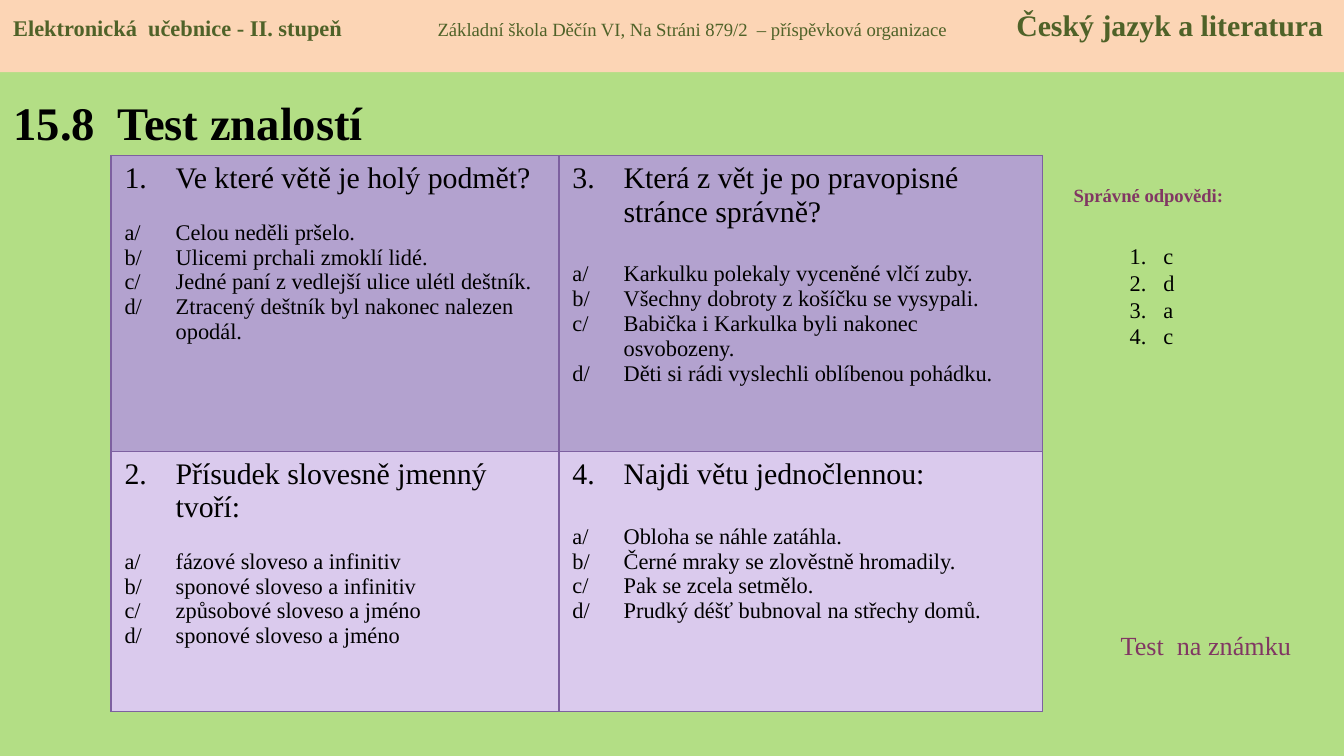
from lxml import etree
from pptx import Presentation
from pptx.dml.color import RGBColor
from pptx.enum.shapes import MSO_SHAPE
from pptx.enum.text import MSO_ANCHOR, MSO_AUTO_SIZE, PP_ALIGN
from pptx.oxml.ns import qn
from pptx.util import Pt

RECTANGLE = MSO_SHAPE.RECTANGLE
TOP, MIDDLE = MSO_ANCHOR.TOP, MSO_ANCHOR.MIDDLE
LEFT, CENTER = PP_ALIGN.LEFT, PP_ALIGN.CENTER
NO_AUTOFIT = MSO_AUTO_SIZE.NONE

FONT = "Times New Roman"
COLORS = {
    "background": "B3DE85",
    "banner": "FCD5B5",
    "banner_text": "4F6228",
    "text": "000000",
    "accent": "813763",
    "row_dark": "B3A2CF",
    "row_light": "DACAED",
    "border": "7D60A0",
}


def style(paragraph, size, color="text", bold=False):
    paragraph.font.name = FONT
    paragraph.font.size = Pt(size)
    paragraph.font.bold = bold
    paragraph.font.color.rgb = RGBColor.from_string(COLORS[color])


def hang(paragraph, indent, number=None):
    """Set a hanging indent, with automatic numbering if a number is given."""
    properties = paragraph._p.get_or_add_pPr()
    properties.set("marL", str(Pt(indent)))
    properties.set("indent", str(-Pt(indent)))
    if number is None:
        etree.SubElement(properties, qn("a:buNone"))
    else:
        numbering = etree.SubElement(properties, qn("a:buAutoNum"), type="arabicPeriod")
        if number > 1:
            numbering.set("startAt", str(number))


prs = Presentation()
prs.slide_width, prs.slide_height = Pt(720), Pt(405)
slide = prs.slides.add_slide(prs.slide_layouts[1])
slide.background.fill.solid()
slide.background.fill.fore_color.rgb = RGBColor.from_string(COLORS["background"])

# Title
title = slide.shapes.title
title.left, title.top, title.width, title.height = Pt(0), Pt(42), Pt(255), Pt(47)
title.text_frame.text = "15.8  Test znalostí"
title.text_frame.vertical_anchor = MIDDLE
title.text_frame.auto_size = NO_AUTOFIT
heading = title.text_frame.paragraphs[0]
heading.alignment = LEFT
style(heading, 25, bold=True)

# Numbered list of correct answers
answers = slide.placeholders[1]
answers.left, answers.top, answers.width, answers.height = Pt(598), Pt(111.6), Pt(40), Pt(94)
answers.text_frame.text = "c\nd\na\nc"
answers.text_frame.auto_size = NO_AUTOFIT
answers.text_frame.margin_top = Pt(18)
for answer in answers.text_frame.paragraphs:
    hang(answer, 18, 1)
    answer.space_before = Pt(0)
    answer.line_spacing = Pt(14.4)
    style(answer, 12)

# Labels beside the table
for label, left, top, height, size, bold, alignment in [
    ("Správné odpovědi:", 558.7, 95, 19.4, 10, True, CENTER),
    ("Test  na známku", 593.3, 333.4, 24.5, 14, False, LEFT),
]:
    box = slide.shapes.add_textbox(Pt(left), Pt(top), Pt(113), Pt(height))
    box.text_frame.word_wrap = True
    box.text_frame.text = label
    caption = box.text_frame.paragraphs[0]
    caption.alignment = alignment
    style(caption, size, "accent", bold)

# Table of questions: number, question, gap before the options, options
questions = [
    [
        (1, "Ve které větě je holý podmět?", 13.3,
         ["Celou neděli pršelo.", "Ulicemi prchali zmoklí lidé.",
          "Jedné paní z vedlejší ulice ulétl deštník.",
          "Ztracený deštník byl nakonec nalezen opodál."]),
        (3, "Která z vět je po pravopisné stránce správně?", 17.7,
         ["Karkulku polekaly vyceněné vlčí zuby.",
          "Všechny dobroty z košíčku se vysypali.",
          "Babička i Karkulka byli nakonec osvobozeny.",
          "Děti si rádi vyslechli oblíbenou pohádku."]),
    ],
    [
        (2, "Přísudek slovesně jmenný tvoří:", 13.3,
         ["fázové sloveso a infinitiv", "sponové sloveso a infinitiv",
          "způsobové sloveso a jméno", "sponové sloveso a jméno"]),
        (4, "Najdi větu jednočlennou:", 17.7,
         ["Obloha se náhle zatáhla.", "Černé mraky se zlověstně hromadily.",
          "Pak se zcela setmělo.", "Prudký déšť bubnoval na střechy domů."]),
    ],
]
table = slide.shapes.add_table(2, 2, Pt(59.5), Pt(83.3), Pt(499), Pt(297.8)).table
table.first_row = table.horz_banding = False
for column, width in zip(table.columns, (240, 259)):
    column.width = Pt(width)
for row, height in zip(table.rows, (158.5, 139.3)):
    row.height = Pt(height)

for r, (row_questions, row_color) in enumerate(zip(questions, ("row_dark", "row_light"))):
    for c, (number, question, gap, options) in enumerate(row_questions):
        cell = table.cell(r, c)
        lettered = [f"{letter}/\t{option}" for letter, option in zip("abcd", options)]
        cell.text_frame.text = "\n".join([question] + lettered)
        for i, line in enumerate(cell.text_frame.paragraphs):
            hang(line, 27.4, number if i == 0 else None)
            line.space_before = Pt(gap if i == 1 else 0)
            style(line, 16 if i == 0 else 12)

        # Borders come before the fill in the cell properties
        cell_properties = cell._tc.get_or_add_tcPr()
        for side in ("lnL", "lnR", "lnT", "lnB"):
            border = etree.SubElement(cell_properties, qn(f"a:{side}"), w=str(Pt(0.75)))
            border_fill = etree.SubElement(border, qn("a:solidFill"))
            etree.SubElement(border_fill, qn("a:srgbClr"), val=COLORS["border"])
        cell.fill.solid()
        cell.fill.fore_color.rgb = RGBColor.from_string(COLORS[row_color])

# Banner, its three parts set apart by tab stops
banner = slide.shapes.add_shape(RECTANGLE, Pt(0), Pt(0), Pt(720), Pt(38.7))
banner.shadow.inherit = False
banner.fill.solid()
banner.fill.fore_color.rgb = RGBColor.from_string(COLORS["banner"])
banner.line.fill.background()
banner.text_frame.vertical_anchor = TOP
banner_line = banner.text_frame.paragraphs[0]
banner_line.alignment = LEFT
tab_stops = etree.SubElement(banner_line._p.get_or_add_pPr(), qn("a:tabLst"))
for position in (227.4, 537.4):
    etree.SubElement(tab_stops, qn("a:tab"), pos=str(Pt(position)), algn="l")
style(banner_line, 12, "banner_text")
for part, size, bold in [
    ("Elektronická  učebnice - II. stupeň\t", 12, True),
    ("Základní škola Děčín VI, Na Stráni 879/2  – příspěvková organizace\t", 10, False),
    ("Český jazyk a literatura", 16, True),
]:
    run = banner_line.add_run()
    run.text = part
    run.font.size = Pt(size)
    run.font.bold = bold

prs.save("out.pptx")
